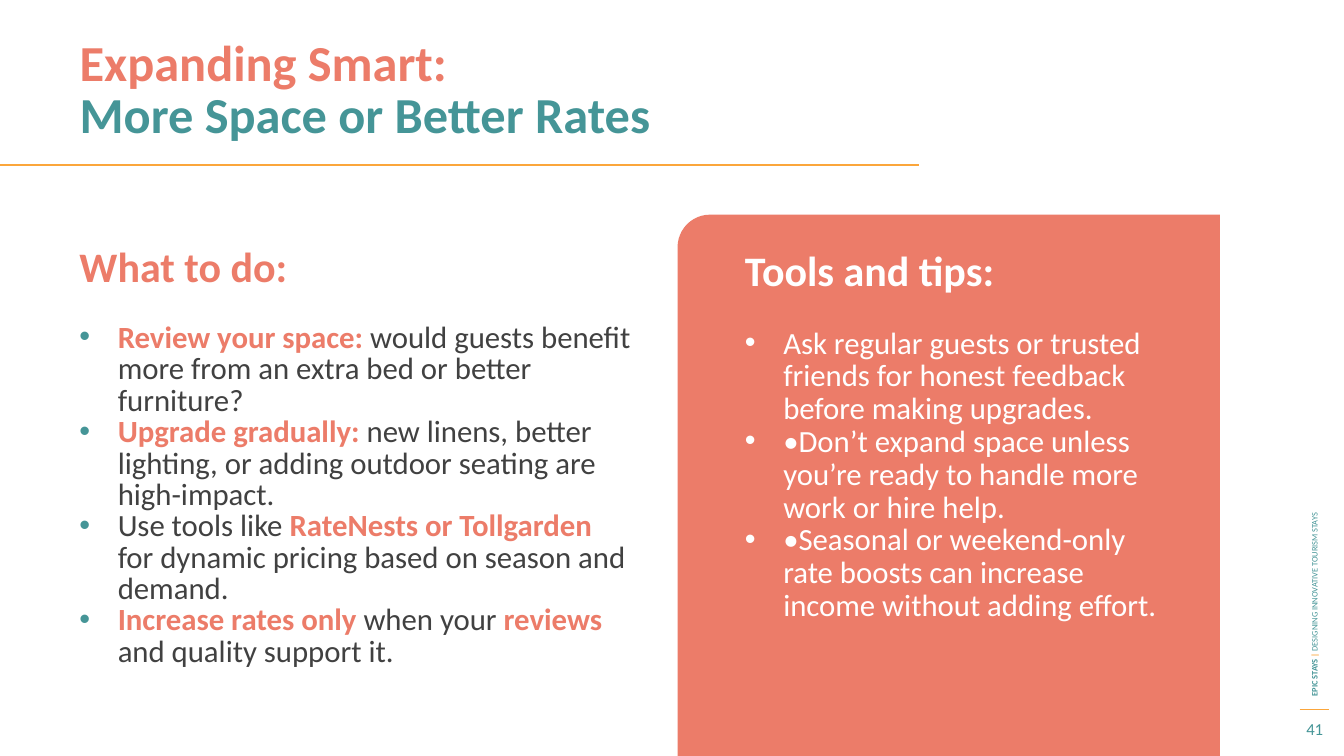
from lxml import etree
from pptx import Presentation
from pptx import util as u
from pptx.dml.color import RGBColor
from pptx.enum import shapes, text
from pptx.oxml.ns import qn

# The grid has 133.3 columns and 75 rows, each a tenth of an inch.
CELL = u.Inches(0.1)
COLUMNS, ROWS = 133.3, 75
MARGIN = 6.9
RULE_END = 91.1

FONT = "Calibri"
CORAL = RGBColor(0xEC, 0x7C, 0x69)
TEAL = RGBColor(0x45, 0x95, 0x97)
AMBER = RGBColor(0xFB, 0xA6, 0x3B)
CHARCOAL = RGBColor(0x41, 0x41, 0x41)
WHITE = RGBColor(0xFF, 0xFF, 0xFF)

TITLE = [[("Expanding Smart:", CORAL, True)],
         [("More Space or Better Rates", TEAL, True)]]
ACTIONS = [
    [("Review your space: ", CORAL, True),
     ("would guests benefit more from an extra bed or better furniture?", CHARCOAL, False)],
    [("Upgrade gradually: ", CORAL, True),
     ("new linens, better lighting, or adding outdoor seating are high-impact.", CHARCOAL, False)],
    [("Use tools like ", CHARCOAL, False),
     ("RateNests or Tollgarden ", CORAL, True),
     ("for dynamic pricing based on season and demand.", CHARCOAL, False)],
    [("Increase rates only ", CORAL, True),
     ("when your", CHARCOAL, False),
     (" reviews ", CORAL, True),
     ("and quality support it.", CHARCOAL, False)],
]
TIPS = [
    "Ask regular guests or trusted friends for honest feedback before making upgrades.",
    "•Don’t expand space unless you’re ready to handle more work or hire help.",
    "•Seasonal or weekend-only rate boosts can increase income without adding effort.",
]
FOOTER = [("EPIC STAYS ", TEAL, True), ("| ", AMBER, True),
          ("DESIGNING INNOVATIVE TOURISM STAYS", TEAL, False)]


def grid(*cells):
    return [round(cell * CELL) for cell in cells]


def add_bullet(paragraph, color):
    properties = paragraph._p.get_or_add_pPr()
    indent = u.Inches(0.38)
    properties.set("marL", str(indent))
    properties.set("indent", str(-indent))
    bullet_color = etree.SubElement(properties, qn("a:buClr"))
    etree.SubElement(bullet_color, qn("a:srgbClr")).set("val", str(color))
    etree.SubElement(properties, qn("a:buFont")).set("typeface", "Arial")
    etree.SubElement(properties, qn("a:buChar")).set("char", "•")


def write(frame, paragraphs, size, spacing=None, bullet=None, after=0,
          align=text.PP_ALIGN.LEFT):
    """Add paragraphs, each a list of (words, colour, bold) runs."""
    for runs in paragraphs:
        paragraph = frame.paragraphs[-1]
        if paragraph.runs:
            paragraph = frame.add_paragraph()
        paragraph.alignment = align
        paragraph.space_before = u.Pt(0)
        paragraph.space_after = u.Pt(after)
        if spacing:
            paragraph.line_spacing = u.Pt(spacing)
        if bullet is not None:
            add_bullet(paragraph, bullet)
        for words, color, bold in runs:
            run = paragraph.add_run()
            run.text = words
            run.font.name = FONT
            run.font.size = u.Pt(size)
            run.font.bold = bold
            run.font.color.rgb = color


def add_box(slide, left, top, width, height, anchor=text.MSO_ANCHOR.TOP):
    box = slide.shapes.add_textbox(*grid(left, top, width, height))
    box.text_frame.word_wrap = True
    box.text_frame.vertical_anchor = anchor
    return box


def add_rule(slide, left, right, row, weight):
    rule = slide.shapes.add_connector(
        shapes.MSO_CONNECTOR.STRAIGHT, *grid(left, row, right, row))
    rule.line.color.rgb = AMBER
    rule.line.width = u.Pt(weight)
    etree.SubElement(rule._element.spPr, qn("a:effectLst"))


def add_title(slide):
    title = slide.shapes.title
    title.left, title.top, title.width, title.height = grid(MARGIN, 3.4, RULE_END, 8.8)
    frame = title.text_frame
    frame.auto_size = text.MSO_AUTO_SIZE.NONE
    frame.vertical_anchor = text.MSO_ANCHOR.TOP
    write(frame, TITLE, 36, spacing=37.2)
    add_rule(slide, 0, RULE_END, 16.4, 1.5)


def add_panel(slide):
    """Draw the coral panel, rounded only at its top left corner."""
    left, top, width = 67.2, 21.3, 53.8
    panel = slide.shapes.add_shape(
        shapes.MSO_SHAPE.SNIP_ROUND_RECTANGLE, *grid(left, top, width, ROWS - top))
    panel.adjustments[0] = 0.06
    panel.adjustments[1] = 0
    panel.shadow.inherit = False
    panel.fill.solid()
    panel.fill.fore_color.rgb = CORAL
    panel.line.fill.background()


def add_actions(slide):
    heading = add_box(slide, MARGIN, 24.3, 61.4, 7.3)
    write(heading.text_frame, [[("What to do:", CORAL, True)]], 30, spacing=29)
    actions = add_box(slide, MARGIN, 31.6, 56.7, 40)
    write(actions.text_frame, ACTIONS, 22, spacing=22.4, bullet=TEAL)


def add_tips(slide):
    spacing = 23.4
    frame = add_box(slide, 72.9, 25.5, 44.5, 35.9).text_frame
    write(frame, [[("Tools and tips:", WHITE, True)]], 30, spacing=spacing, after=spacing)
    write(frame, [[(tip, WHITE, False)] for tip in TIPS], 22, spacing=spacing, bullet=WHITE)


def add_margin_notes(slide):
    middle = text.MSO_ANCHOR.MIDDLE
    add_rule(slide, 128.9, 131.8, 70.4, 0.75)
    footer = add_box(slide, 101.5, 40.2, 57.7, 2, middle)
    footer.rotation = 270
    write(footer.text_frame, [FOOTER], 6)
    number = add_box(slide, 127.8, 70.6, 5.2, 3.4, middle)
    write(number.text_frame, [[("41", TEAL, False)]], 12, align=text.PP_ALIGN.CENTER)


def main():
    presentation = Presentation()
    presentation.slide_width, presentation.slide_height = grid(COLUMNS, ROWS)
    title_only = presentation.slide_layouts[5]
    slide = presentation.slides.add_slide(title_only)
    add_margin_notes(slide)
    add_title(slide)
    add_panel(slide)
    add_actions(slide)
    add_tips(slide)
    presentation.save("out.pptx")


if __name__ == "__main__":
    main()
